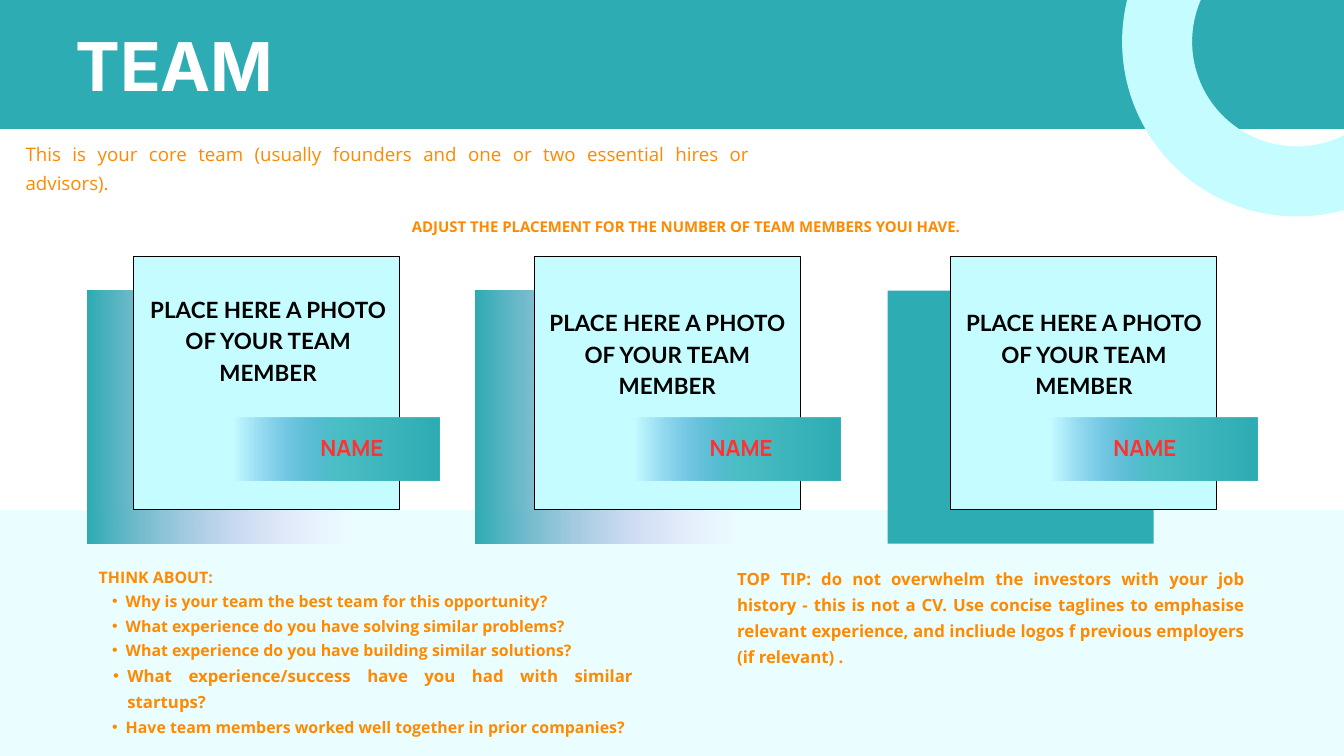
"""Build the team slide with three member cards and advice text."""
from dataclasses import dataclass

from lxml import etree
from pptx import Presentation
from pptx import util as u
from pptx.dml.color import RGBColor
from pptx.enum import shapes, text
from pptx.oxml.ns import qn

Pt = u.Pt
LEFT, CENTER, JUSTIFY = text.PP_ALIGN.LEFT, text.PP_ALIGN.CENTER, text.PP_ALIGN.JUSTIFY


@dataclass(frozen=True)
class Theme:
    teal: str = "2EACB3"
    aqua: str = "C5FCFF"
    mist: str = "EBFEFF"
    black: str = "000000"
    fade_out: tuple = ((0, "2EACB3", 100), (100, "F5AEFF", 0))
    fade_in: tuple = ((0, "006CCD", 0), (50, "4CBFC5", 100), (100, "2EACB3", 100))
    title: tuple = ("Inter", 72, "FFFFFF", True, 75.6)
    name: tuple = ("Manrope", 23.9, "FF3131", True, 33.4)
    photo: tuple = ("Lato", 24, "000000", True, 33.6)
    intro: tuple = ("Open Sans", 20, "FF8900", False, 31)
    note: tuple = ("Open Sans", 16, "FF8900", True, 24.8)
    body: tuple = ("Open Sans", 17, "FF8900", True, 26.3)
    tip: tuple = ("Open Sans", 18, "FF8900", True, 27.9)


THEME = Theme()
ADVICE = [
    ("Why is your team the best team for this opportunity?", THEME.body),
    ("What experience do you have solving similar problems?", THEME.body),
    ("What experience do you have building similar solutions?", THEME.body),
    ("What experience/success have you had with similar startups?", THEME.tip),
    ("Have team members worked well together in prior companies?", THEME.body),
]
CARDS = [
    dict(x=143.3, back_x=93.6, back=THEME.fade_out, photo=(159.1, 312.5), name_x=343.4),
    dict(x=572.9, back_x=509, back=THEME.fade_out, photo=(586.8, 326.9), name_x=760.3),
    dict(x=1018.8, back_x=951.1, back=THEME.teal, photo=(1033.2, 326.9), name_x=1193),
]


def apply(target, values):
    for key, value in values.items():
        setattr(target, key, value)


def add_gradient(sp, stops):
    sp.fill.gradient()
    grad = sp._element.spPr.find(qn("a:gradFill"))
    for child in list(grad):
        grad.remove(child)
    gs_list = etree.SubElement(grad, qn("a:gsLst"))
    for pos, color, alpha in stops:
        gs = etree.SubElement(gs_list, qn("a:gs"), pos=str(pos * 1000))
        clr = etree.SubElement(gs, qn("a:srgbClr"), val=color)
        etree.SubElement(clr, qn("a:alpha"), val=str(alpha * 1000))
    etree.SubElement(grad, qn("a:lin"), ang="0", scaled="0")


def add_box(s, box, fill=None, line=None, kind=shapes.MSO_SHAPE.RECTANGLE):
    sp = s.shapes.add_shape(kind, *map(Pt, box))
    if fill is None:
        sp.fill.background()
    elif isinstance(fill, str):
        sp.fill.solid()
        sp.fill.fore_color.rgb = RGBColor.from_string(fill)
    else:
        add_gradient(sp, fill)
    if line:
        color, width = line
        sp.line.color.rgb = RGBColor.from_string(color)
        sp.line.width = Pt(width)
    else:
        sp.line.fill.background()
    sp.shadow.inherit = False


def add_bullet(p, size):
    pPr = p._p.get_or_add_pPr()
    hang = Pt(size * 0.85)
    apply_xml = {"marL": 2 * hang, "indent": -hang, "lvl": 1}
    for key, value in apply_xml.items():
        pPr.set(key, str(int(value)))
    etree.SubElement(pPr, qn("a:buFont"), typeface="Arial")
    etree.SubElement(pPr, qn("a:buChar"), char="•")


def add_run(p, content, style, align):
    font, size, color, bold, spacing = style
    apply(p, {"alignment": align, "line_spacing": Pt(spacing)})
    r = p.add_run()
    r.text = content
    apply(r.font, {"name": font, "size": Pt(size), "bold": bold})
    r.font.color.rgb = RGBColor.from_string(color)


def add_text(s, box, content, style, align=JUSTIFY, bullets=()):
    tf = s.shapes.add_textbox(*map(Pt, box)).text_frame
    apply(tf, {"margin_left": 0, "margin_top": 0, "margin_right": 0, "margin_bottom": 0,
               "word_wrap": True, "auto_size": text.MSO_AUTO_SIZE.SHAPE_TO_FIT_TEXT})
    add_run(tf.paragraphs[0], content, style, align)
    for item, item_style in bullets:
        p = tf.add_paragraph()
        add_run(p, item, item_style, align)
        add_bullet(p, item_style[1])


def add_card(s, x, back_x, back, photo, name_x):
    add_box(s, (back_x, 311.5, 285, 271), back)
    add_box(s, (x, 274.5, 285, 271), THEME.aqua, (THEME.black, 1))
    add_box(s, (x + 107.7, 447, 220.3, 68), THEME.fade_in)
    add_text(s, (*photo, 256.3, 97.2), "PLACE HERE A PHOTO OF YOUR TEAM MEMBER",
             THEME.photo, CENTER)
    add_text(s, (name_x, 460.8, 128.2, 33.1), "NAME", THEME.name, LEFT)


def main():
    prs = Presentation()
    apply(prs, {"slide_width": Pt(1440), "slide_height": Pt(810)})
    s = prs.slides.add_slide(prs.slide_layouts[6])

    add_box(s, (0, 0, 1440, 138.2), THEME.teal)
    add_box(s, (1239.8, -105.1, 299.5, 299.5), line=(THEME.aqua, 75),
            kind=shapes.MSO_SHAPE.OVAL)
    add_box(s, (0, 546.5, 1440, 269.5), THEME.mist)
    for card in CARDS:
        add_card(s, **card)

    add_text(s, (80.6, 36.7, 806.4, 78.5), "TEAM", THEME.title, LEFT)
    add_text(s, (27.4, 146.2, 775.4, 28.8),
             "This is your core team (usually founders and one or two essential "
             "hires or advisors).", THEME.intro)
    add_text(s, (441.4, 227.5, 614.2, 23),
             "ADJUST THE PLACEMENT FOR THE NUMBER OF TEAM MEMBERS YOUI HAVE.", THEME.note)
    add_text(s, (105.8, 601.9, 572.4, 157.7), "THINK ABOUT:", THEME.body, bullets=ADVICE)
    add_text(s, (789.8, 602.6, 543.6, 108.7),
             "TOP TIP: do not overwhelm the investors with your job history - this is "
             "not a CV. Use concise taglines to emphasise relevant experience, and "
             "incliude logos f previous employers (if relevant) .", THEME.tip)
    prs.save("out.pptx")


if __name__ == "__main__":
    main()
